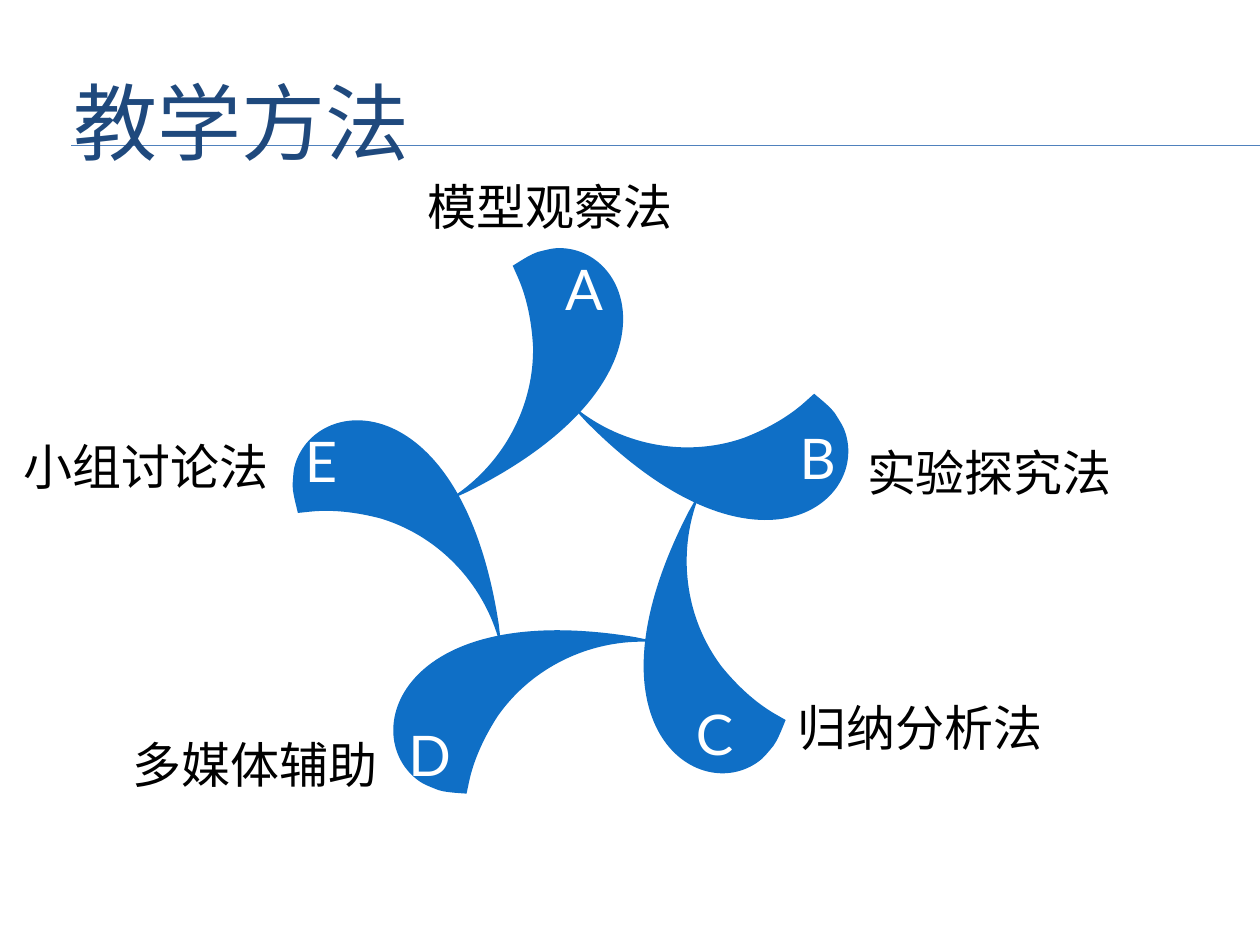
from dataclasses import dataclass
from math import cos, radians, sin

from lxml import etree
from pptx import Presentation
from pptx.dml.color import RGBColor
from pptx.enum.shapes import MSO_CONNECTOR
from pptx.enum.text import MSO_ANCHOR, PP_ALIGN
from pptx.oxml.ns import qn
from pptx.util import Pt

LEFT, CENTER, RIGHT = PP_ALIGN.LEFT, PP_ALIGN.CENTER, PP_ALIGN.RIGHT
TOP, MIDDLE, BOTTOM = MSO_ANCHOR.TOP, MSO_ANCHOR.MIDDLE, MSO_ANCHOR.BOTTOM
STRAIGHT = MSO_CONNECTOR.STRAIGHT


@dataclass(frozen=True)
class Theme:
    petal: RGBColor = RGBColor(0x0F, 0x6F, 0xC6)
    rule: RGBColor = RGBColor(0x4F, 0x81, 0xBD)
    title: RGBColor = RGBColor(0x1F, 0x49, 0x7D)
    label: RGBColor = RGBColor(0, 0, 0)
    letter: RGBColor = RGBColor(0xFF, 0xFF, 0xFF)
    heading_font: str = "Lato"
    label_font: str = "Arial"
    title_size: float = 48
    label_size: float = 28
    letter_size: float = 32
    rule_width: float = 0.75


HUB = (328.8, 307)
PETAL_SEGMENTS = [
    [(-9.8, -165.2)],
    [(33.4, -165.9), (62.2, -88.1), (-61, -26.2)],
    [(-76.8, -19)],
    [(-45.1, -36.3), (-23.5, -70.8), (-24.2, -109)],
    [(-25, -123.4), (-27.8, -137.1), (-32.9, -148.6)],
    [(-35.8, -155.1)],
    [(-30, -158.7)],
    [(-26.4, -160.8), (-22.8, -163), (-18.5, -163.7)],
    [(-15.6, -164.4), (-12.7, -165.2), (-9.8, -165.2)],
]
CURVE_STEPS = 40

PETALS = [
    ("A", RIGHT, TOP, 11.5),
    ("B", RIGHT, MIDDLE, 7.2),
    ("C", CENTER, BOTTOM, 7.2),
    ("D", LEFT, BOTTOM, 8.64),
    ("E", LEFT, TOP, 7.2),
]
LABELS = [
    ("模型观察法", 235.6, 82.8, 157.7, 52.6, CENTER),
    ("实验探究法", 484.6, 235.2, 157.7, 52.6, RIGHT),
    ("归纳分析法", 448.6, 374.4, 176.4, 65.5, LEFT),
    ("多媒体辅助", 67, 401.8, 157.7, 52.6, CENTER),
    ("小组讨论法", 2.7, 231.8, 157.7, 52.6, RIGHT),
]


def write(frame, text, *, font, size, color, align=LEFT, anchor=MIDDLE,
          spacing=None, side_inset=7.2):
    frame.word_wrap = True
    frame.vertical_anchor = anchor
    frame.margin_left = frame.margin_right = Pt(side_inset)
    para = frame.paragraphs[0]
    para.alignment = align
    para.line_spacing = spacing
    span = para.add_run()
    span.text = text
    span.font.name = font
    span.font.size = Pt(size)
    span.font.color.rgb = color


def turned_petal(degrees):
    c, s = cos(radians(degrees)), sin(radians(degrees))
    return [
        [(Pt(HUB[0] + x * c - y * s), Pt(HUB[1] + x * s + y * c)) for x, y in segment]
        for segment in PETAL_SEGMENTS
    ]


def curve_bounds(segments):
    points = []
    for segment in segments:
        if len(segment) == 3:
            controls = [points[-1], *segment]
            for step in range(1, CURVE_STEPS):
                t = step / CURVE_STEPS
                weights = ((1 - t) ** 3, 3 * t * (1 - t) ** 2, 3 * t * t * (1 - t), t ** 3)
                points.append(tuple(
                    sum(weight * point[axis] for weight, point in zip(weights, controls))
                    for axis in (0, 1)
                ))
        points.append(segment[-1])
    across, down = zip(*points)
    return min(across), min(down), max(across), max(down)


class SlideWriter:
    def __init__(self, page, theme):
        self.page = page
        self.theme = theme

    def rule(self, left, right, y):
        line = self.page.shapes.add_connector(STRAIGHT, Pt(left), Pt(y), Pt(right), Pt(y))
        line.line.color.rgb = self.theme.rule
        line.line.width = Pt(self.theme.rule_width)
        etree.SubElement(line._element.spPr, qn("a:effectLst"))

    def text_box(self, text, left, top, width, height, **style):
        box = self.page.shapes.add_textbox(Pt(left), Pt(top), Pt(width), Pt(height))
        write(box.text_frame, text, **style)

    def title(self, text, left, top, width, height):
        self.text_box(text, left, top, width, height, font=self.theme.heading_font,
                      size=self.theme.title_size, color=self.theme.title)

    def label(self, text, left, top, width, height, align):
        self.text_box(text, left, top, width, height, font=self.theme.label_font,
                      size=self.theme.label_size, color=self.theme.label,
                      align=align, spacing=1.5)

    def curved_outline(self, segments):
        left, top, right, bottom = curve_bounds(segments)
        builder = self.page.shapes.build_freeform(left, top)
        builder.add_line_segments([(right, top), (right, bottom), (left, bottom)])
        shape = builder.convert_to_shape()
        outline = shape._element.spPr.find(".//" + qn("a:path"))
        for child in list(outline):
            outline.remove(child)
        for index, segment in enumerate(segments):
            tag = "a:cubicBezTo" if len(segment) == 3 else "a:lnTo"
            command = etree.SubElement(outline, qn(tag if index else "a:moveTo"))
            for x, y in segment:
                etree.SubElement(command, qn("a:pt"), x=str(round(x - left)),
                                 y=str(round(y - top)))
        etree.SubElement(outline, qn("a:close"))
        return shape

    def petal(self, segments, letter, align, anchor, side_inset):
        shape = self.curved_outline(segments)
        shape.shadow.inherit = False
        shape.fill.solid()
        shape.fill.fore_color.rgb = self.theme.petal
        shape.line.fill.background()
        write(shape.text_frame, letter, font=self.theme.heading_font,
              size=self.theme.letter_size, color=self.theme.letter,
              align=align, anchor=anchor, side_inset=side_inset)


def main():
    deck = Presentation()
    deck.slide_width, deck.slide_height = Pt(720), Pt(540)
    page = deck.slides.add_slide(deck.slide_layouts[6])
    writer = SlideWriter(page, Theme())
    for y in (83, 83.3):
        writer.rule(40.6, 720, y)
    writer.title("教学方法", 35, 36, 684, 66.2)
    for index, petal in enumerate(PETALS):
        writer.petal(turned_petal(index * 360 / len(PETALS)), *petal)
    for label in LABELS:
        writer.label(*label)
    deck.save("out.pptx")


if __name__ == "__main__":
    main()
